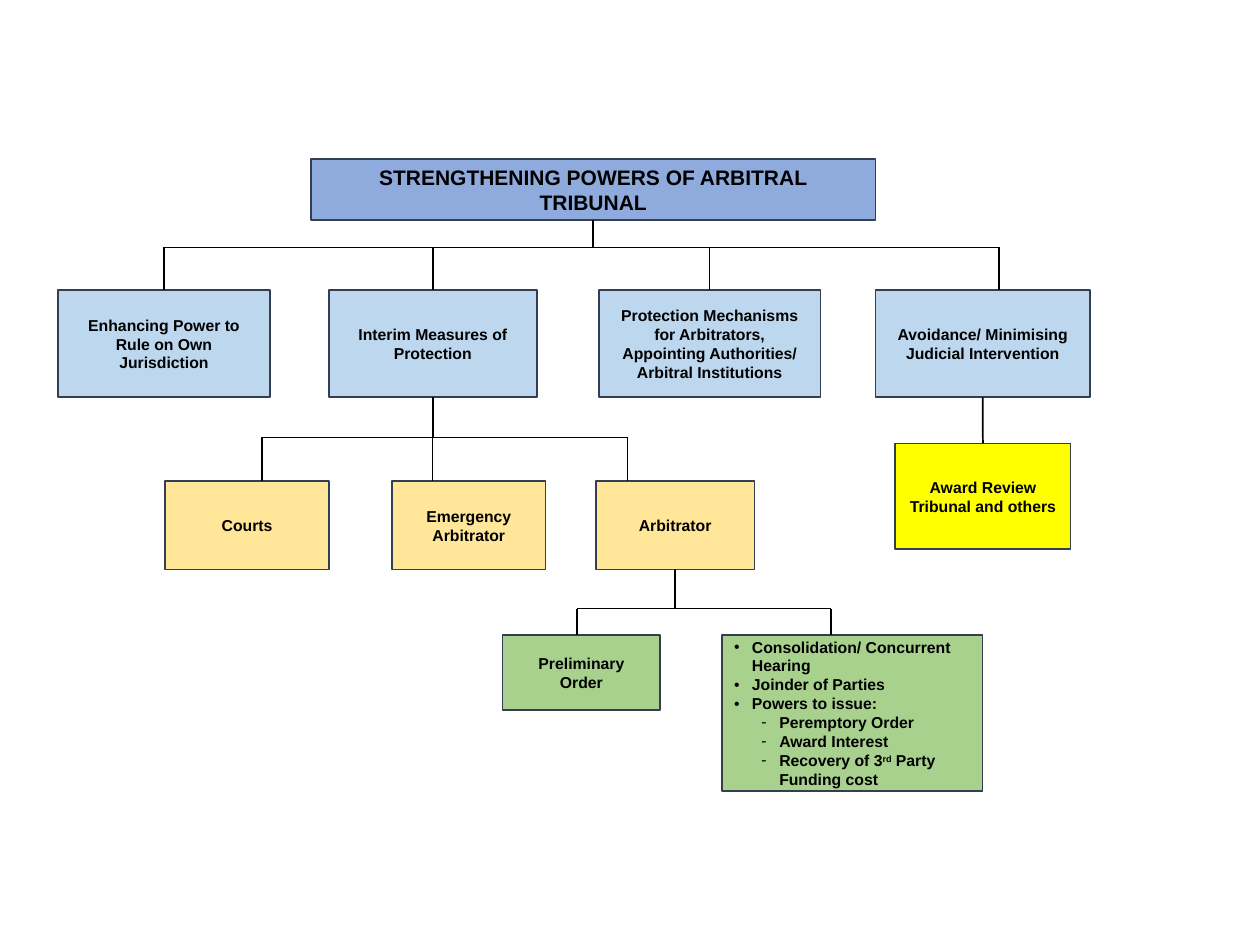
from dataclasses import dataclass

from lxml import etree
from pptx import Presentation
from pptx.dml.color import RGBColor
from pptx.enum.shapes import MSO_CONNECTOR, MSO_SHAPE
from pptx.enum.text import MSO_ANCHOR, MSO_AUTO_SIZE, PP_ALIGN
from pptx.oxml.ns import qn
from pptx.util import Cm, Pt

RECT = MSO_SHAPE.RECTANGLE
LINE = MSO_CONNECTOR.STRAIGHT
MIDDLE = MSO_ANCHOR.MIDDLE
FIXED = MSO_AUTO_SIZE.NONE
CENTER = PP_ALIGN.CENTER
LEFT = PP_ALIGN.LEFT
TOP, BOTTOM = 0, 2


@dataclass(frozen=True)
class Theme:
    font: str = "Arial"
    ink: str = "000000"
    edge: str = "333F50"
    head: str = "8FAADC"
    topic: str = "BDD7EE"
    body: str = "FFE699"
    power: str = "A9D18E"
    review: str = "FFFF00"
    big: float = 12
    small: float = 9
    thick: float = 1
    thin: float = 0.5


THEME = Theme()


def color(code):
    return RGBColor.from_string(code)


def paint(shape, fill):
    shape.shadow.inherit = False
    shape.fill.solid()
    shape.fill.fore_color.rgb = color(fill)
    shape.line.color.rgb = color(THEME.edge)
    shape.line.width = Pt(THEME.thick)
    frame = shape.text_frame
    frame.word_wrap = True
    frame.auto_size = FIXED
    frame.vertical_anchor = MIDDLE


def write(para, text, size=THEME.small, raised=False):
    run = para.add_run()
    run.text = text
    font = run.font
    font.name, font.size, font.bold = THEME.font, Pt(size), True
    font.color.rgb = color(THEME.ink)
    if raised:
        run._r.get_or_add_rPr().set("baseline", "30000")


def bullet(para, mark, left):
    props = para._p.get_or_add_pPr()
    props.set("marL", str(Cm(left)))
    props.set("indent", str(Cm(-0.36)))
    etree.SubElement(props, qn("a:buFont")).set("typeface", THEME.font)
    etree.SubElement(props, qn("a:buChar")).set("char", mark)


def card(slide, box, fill, text=""):
    shape = slide.shapes.add_shape(RECT, *map(Cm, box))
    paint(shape, fill)
    para = shape.text_frame.paragraphs[0]
    para.alignment = CENTER
    if text:
        write(para, text)
    return shape


def header(slide, box, text):
    title = slide.shapes.title
    title.left, title.top, title.width, title.height = map(Cm, box)
    paint(title, THEME.head)
    para = title.text_frame.paragraphs[0]
    para.alignment = CENTER
    para.line_spacing = 1.0
    write(para, text, THEME.big)
    return title


def row(slide, box, fill, cells):
    left, top, height = box
    return [card(slide, (left + shift, top, width, height), fill, text)
            for shift, width, text in cells]


def powers(slide, box, items):
    shape = card(slide, box, THEME.power)
    frame = shape.text_frame
    for index, (mark, left, parts) in enumerate(items):
        para = frame.paragraphs[0] if index == 0 else frame.add_paragraph()
        para.alignment = LEFT
        bullet(para, mark, left)
        for part in parts:
            write(para, part, raised=part == "rd")
    return shape


def link(slide, start, end, width=THEME.thick):
    wire = slide.shapes.add_connector(LINE, *start, *end)
    wire.line.color.rgb = color(THEME.ink)
    wire.line.width = Pt(width)
    etree.SubElement(wire._element.spPr, qn("a:effectLst"))
    return wire


def mid(shape):
    return shape.left + shape.width // 2


def fork(slide, parent, level, drops):
    bus = Cm(level)
    stem = link(slide, (mid(parent), parent.top + parent.height), (mid(parent), bus))
    stem.begin_connect(parent, BOTTOM)
    spots = [mid(child) if x is None else Cm(x) for child, x in drops]
    link(slide, (min(spots), bus), (max(spots), bus), THEME.thin)
    for (child, x), spot in zip(drops, spots):
        drop = link(slide, (spot, bus), (spot, child.top))
        if x is None:
            drop.end_connect(child, TOP)


def chart(slide, left, top):
    head = header(slide, (left + 5.1, top, 11.38, 1.24),
                  "STRENGTHENING POWERS OF ARBITRAL TRIBUNAL")
    rule, interim, shield, avoid = row(
        slide, (left, top + 2.65, 2.16), THEME.topic, [
            (0, 4.27, "Enhancing Power to Rule on Own Jurisdiction"),
            (5.46, 4.19, "Interim Measures of Protection"),
            (10.9, 4.47, "Protection Mechanisms for Arbitrators, "
                         "Appointing Authorities/ Arbitral Institutions"),
            (16.48, 4.32, "Avoidance/ Minimising Judicial Intervention")])
    court, urgent, judge = row(
        slide, (left + 2.16, top + 6.5, 1.78), THEME.body, [
            (0, 3.3, "Courts"),
            (4.57, 3.1, "Emergency Arbitrator"),
            (8.68, 3.2, "Arbitrator")])
    order = card(slide, (left + 8.96, top + 9.6, 3.18, 1.52), THEME.power,
                 "Preliminary Order")
    scope = powers(slide, (left + 13.38, top + 9.6, 5.26, 3.15), [
        ("•", 0.36, ["Consolidation/ Concurrent Hearing"]),
        ("•", 0.36, ["Joinder of Parties"]),
        ("•", 0.36, ["Powers to issue:"]),
        ("-", 0.91, ["Peremptory Order"]),
        ("-", 0.91, ["Award Interest"]),
        ("-", 0.91, ["Recovery of 3", "rd", " Party Funding cost"])])
    review = card(slide, (left + 16.88, top + 5.74, 3.53, 2.13), THEME.review,
                  "Award Review Tribunal and others")

    fork(slide, head, top + 1.78, [(rule, None), (interim, None),
                                   (shield, None), (avoid, left + 18.97)])
    fork(slide, interim, top + 5.61, [(court, left + 4.11), (urgent, left + 7.55),
                                      (judge, left + 11.48)])
    fork(slide, judge, top + 9.07, [(order, left + 10.46), (scope, left + 15.59)])
    wire = link(slide, (mid(avoid), avoid.top + avoid.height),
                (mid(review), review.top))
    wire.begin_connect(avoid, BOTTOM)
    wire.end_connect(review, TOP)


def main():
    deck = Presentation()
    deck.slide_width, deck.slide_height = Cm(25.4), Cm(19.05)
    slide = deck.slides.add_slide(deck.slide_layouts[5])
    chart(slide, 1.17, 3.2)
    deck.save("out.pptx")


if __name__ == "__main__":
    main()
